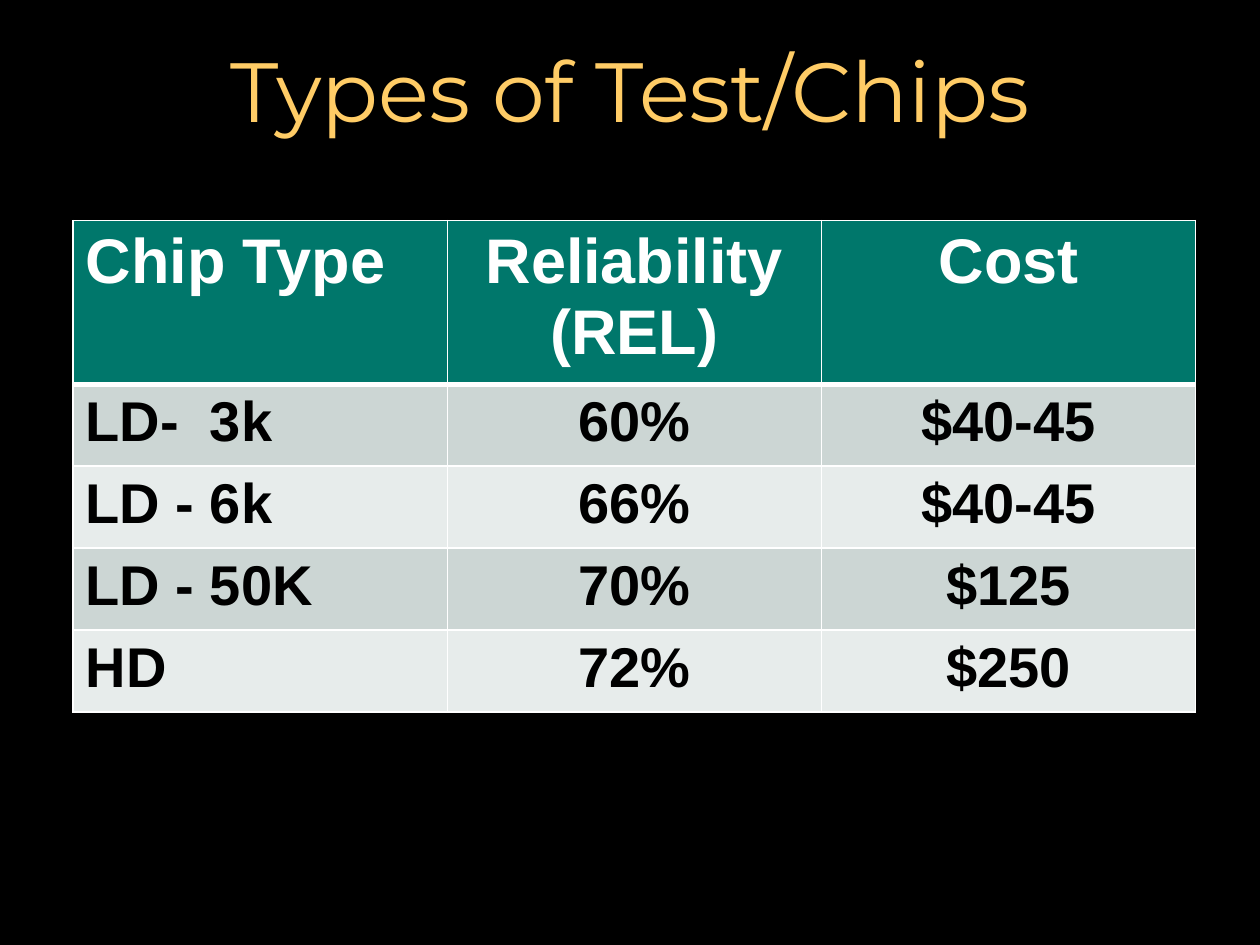
from dataclasses import dataclass

from lxml import etree
from pptx import Presentation
from pptx import util as u
from pptx.dml.color import RGBColor
from pptx.enum import text
from pptx.oxml import ns


@dataclass(frozen=True)
class Theme:
    background: str = "000000"
    title: str = "FFCC66"
    header: str = "00776B"
    bands: tuple = ("CCD6D4", "E7ECEB")
    header_text: str = "FFFFFF"
    body_text: str = "000000"
    border: str = "FFFFFF"
    title_font: str = "Montserrat"
    table_font: str = "Arial"
    title_size: int = 48
    header_size: int = 36
    body_size: int = 32
    thin: int = 1
    thick: int = 3


class Deck:
    """Holds the style and the current page, and adds each kind of element."""

    def __init__(self, theme):
        self.theme = theme
        self.deck = Presentation()
        self.deck.slide_width = u.Inches(10)
        self.deck.slide_height = u.Inches(7.5)
        self.page = None

    def add_page(self):
        self.page = self.deck.slides.add_slide(self.deck.slide_layouts[5])
        fill = self.page.background.fill
        fill.solid()
        fill.fore_color.rgb = RGBColor.from_string(self.theme.background)

    def add_words(self, frame, words, font, size, color, bold, align):
        para = frame.paragraphs[0]
        para.alignment = align
        span = para.add_run()
        span.text = words
        span.font.name = font
        span.font.size = u.Pt(size)
        span.font.bold = bold
        span.font.color.rgb = RGBColor.from_string(color)

    def add_title(self, words, left, top, width, height):
        box = self.page.shapes.title
        box.left, box.top = u.Inches(left), u.Inches(top)
        box.width, box.height = u.Inches(width), u.Inches(height)
        box.text_frame.vertical_anchor = text.MSO_ANCHOR.MIDDLE
        self.add_words(box.text_frame, words, self.theme.title_font, self.theme.title_size,
                       self.theme.title, False, text.PP_ALIGN.CENTER)

    def add_borders(self, cell, top, bottom):
        properties = cell._tc.get_or_add_tcPr()
        thin = self.theme.thin
        sides = (("a:lnL", thin), ("a:lnR", thin), ("a:lnT", top), ("a:lnB", bottom))
        for position, (side, points) in enumerate(sides):
            line = etree.Element(ns.qn(side), w=str(u.Pt(points)))
            fill = etree.SubElement(line, ns.qn("a:solidFill"))
            etree.SubElement(fill, ns.qn("a:srgbClr"), val=self.theme.border)
            properties.insert(position, line)

    def format_cell(self, cell, words, row, column):
        theme = self.theme
        header = row == 0
        cell.fill.solid()
        cell.fill.fore_color.rgb = RGBColor.from_string(
            theme.header if header else theme.bands[(row - 1) % 2])
        self.add_borders(cell, theme.thick if row == 1 else theme.thin,
                         theme.thick if header else theme.thin)
        self.add_words(cell.text_frame, words, theme.table_font,
                       theme.header_size if header else theme.body_size,
                       theme.header_text if header else theme.body_text, True,
                       text.PP_ALIGN.CENTER if column else text.PP_ALIGN.LEFT)

    def add_table(self, rows, left, top, column_width, header_height, row_height):
        count = len(rows[0])
        table = self.page.shapes.add_table(
            len(rows), count, u.Inches(left), u.Inches(top),
            u.Inches(column_width * count),
            u.Inches(header_height + row_height * (len(rows) - 1))).table
        for column in table.columns:
            column.width = u.Inches(column_width)
        for row, values in enumerate(rows):
            table.rows[row].height = u.Inches(row_height if row else header_height)
            for column, words in enumerate(values):
                self.format_cell(table.cell(row, column), words, row, column)


def main():
    chips = Deck(Theme())
    chips.add_page()
    chips.add_title("Types of Test/Chips", 0.5, 0.08, 9, 1.25)
    chip_rows = [
        ("Chip Type", "Reliability (REL)", "Cost"),
        ("LD-  3k", "60%", "$40-45"),
        ("LD - 6k", "66%", "$40-45"),
        ("LD - 50K", "70%", "$125"),
        ("HD", "72%", "$250"),
    ]
    chips.add_table(chip_rows, 0.58, 1.75, 2.97, 1.3, 0.65)
    chips.deck.save("out.pptx")


if __name__ == "__main__":
    main()
